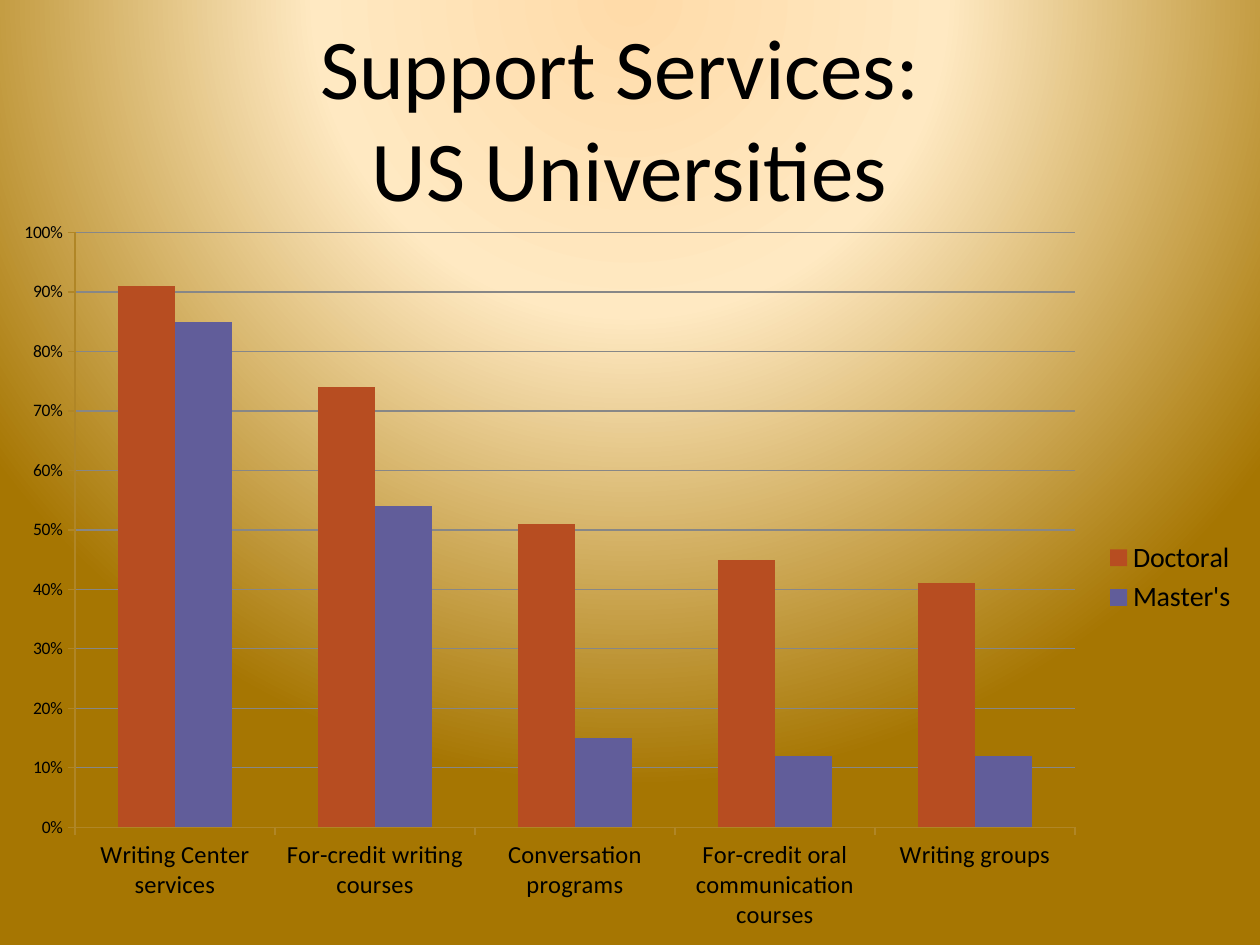
from pptx import Presentation
from pptx.chart.data import CategoryChartData
from pptx.dml.color import RGBColor
from pptx.enum.chart import XL_CHART_TYPE, XL_LEGEND_POSITION, XL_TICK_MARK
from pptx.enum.text import MSO_ANCHOR, MSO_AUTO_SIZE, PP_ALIGN
from pptx.oxml import parse_xml
from pptx.oxml.ns import nsdecls
from pptx.util import Inches, Pt

COLUMN = XL_CHART_TYPE.COLUMN_CLUSTERED
RIGHT = XL_LEGEND_POSITION.RIGHT
OUT = XL_TICK_MARK.OUTSIDE
MIDDLE = MSO_ANCHOR.MIDDLE
NO_FIT = MSO_AUTO_SIZE.NONE
CENTER = PP_ALIGN.CENTER

FACE = "Calibri"
BLACK = "000000"
GRID = "878787"
AXIS = "B08626"
STOPS = [(0, "FFDBA9"), (40, "FFE9C2"), (100, "A67602")]
GROUPS = [
    "Writing Center services",
    "For-credit writing courses",
    "Conversation programs",
    "For-credit oral communication courses",
    "Writing groups",
]
SERIES = [
    ("Doctoral", "B74D21", (0.91, 0.74, 0.51, 0.45, 0.41)),
    ("Master's", "615D9A", (0.85, 0.54, 0.15, 0.12, 0.12)),
]


def color(code):
    return RGBColor.from_string(code)


def style(font, size, code=BLACK):
    font.name = FACE
    font.size = Pt(size)
    font.bold = False
    font.color.rgb = color(code)


def place(shape, left, top, width, height):
    shape.left, shape.top = Inches(left), Inches(top)
    shape.width, shape.height = Inches(width), Inches(height)


def write(frame, text, size, code=BLACK, align=CENTER, anchor=MIDDLE):
    frame.word_wrap = True
    frame.auto_size = NO_FIT
    frame.vertical_anchor = anchor
    para = frame.paragraphs[0]
    para.text = text
    para.alignment = align
    for run in para.runs:
        style(run.font, size, code)


def paint_back(slide):
    # A solid fill creates the background node; the glow then replaces it
    slide.background.fill.solid()
    solid = slide.element.xpath("./p:cSld/p:bg/p:bgPr/a:solidFill")[0]
    stops = "".join(
        f'<a:gs pos="{pos * 1000}"><a:srgbClr val="{code}"/></a:gs>'
        for pos, code in STOPS
    )
    glow = parse_xml(
        f'<a:gradFill rotWithShape="1" {nsdecls("a")}><a:gsLst>{stops}</a:gsLst>'
        '<a:path path="circle"><a:fillToRect l="50000" t="-80000" '
        'r="50000" b="180000"/></a:path></a:gradFill>'
    )
    solid.getparent().replace(solid, glow)


def set_axis(axis, size):
    axis.major_tick_mark = OUT
    axis.format.line.color.rgb = color(AXIS)
    style(axis.tick_labels.font, size)


def set_plot(chart, left, top, width, height):
    # Fix the inner plot area, in shares of the chart
    area = chart.element.xpath(".//c:plotArea")[0]
    for old in area.xpath("./c:layout"):
        area.remove(old)
    sides = zip("xywh", (left, top, width, height))
    parts = "".join(f'<c:{key} val="{val}"/>' for key, val in sides)
    area.insert(0, parse_xml(
        f'<c:layout {nsdecls("c")}><c:manualLayout><c:layoutTarget val="inner"/>'
        '<c:xMode val="edge"/><c:yMode val="edge"/>'
        f"{parts}</c:manualLayout></c:layout>"
    ))


def add_bars(slide, left, top, width, height):
    data = CategoryChartData(number_format="0%")
    data.categories = GROUPS
    for name, _, vals in SERIES:
        data.add_series(name, vals)
    box = map(Inches, (left, top, width, height))
    chart = slide.shapes.add_chart(COLUMN, *box, data).chart
    chart.has_title = False
    style(chart.font, 10)

    # Bars
    plot = chart.plots[0]
    plot.gap_width = 150
    plot.overlap = 0
    plot.vary_by_categories = False
    for bars, (_, code, _) in zip(plot.series, SERIES):
        bars.format.fill.solid()
        bars.format.fill.fore_color.rgb = color(code)

    # Axes
    set_axis(chart.category_axis, 14)
    scale = chart.value_axis
    set_axis(scale, 10)
    scale.minimum_scale, scale.maximum_scale = 0, 1
    scale.major_unit = 0.1
    scale.has_major_gridlines = True
    scale.major_gridlines.format.line.color.rgb = color(GRID)
    scale.tick_labels.number_format = "0%"
    scale.tick_labels.number_format_is_linked = False

    # Legend
    chart.has_legend = True
    chart.legend.position = RIGHT
    chart.legend.include_in_layout = False
    style(chart.legend.font, 16)
    set_plot(chart, 0.06, 0.03, 0.8, 0.81)


def main():
    deck = Presentation()
    deck.slide_width, deck.slide_height = Inches(10), Inches(7.5)
    slide = deck.slides.add_slide(deck.slide_layouts[5])
    paint_back(slide)

    # Title
    title = slide.shapes.title
    place(title, 0.62, 0.3, 8.75, 1.25)
    write(title.text_frame, "Support Services: \vUS Universities", 48.6)

    # Chart
    add_bars(slide, 0, 1.67, 9.92, 5.83)
    deck.save("out.pptx")


if __name__ == "__main__":
    main()
